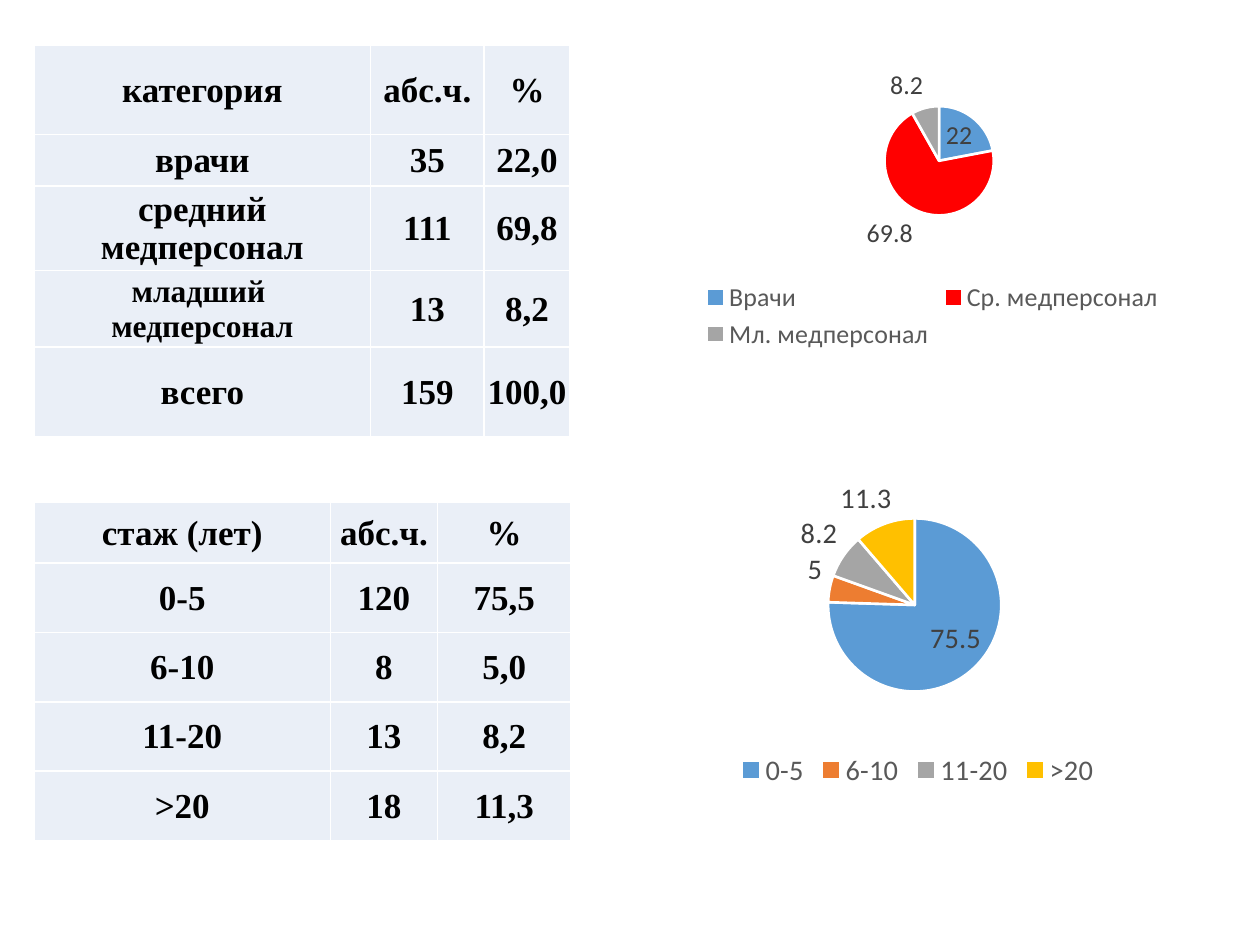
from lxml import etree
from pptx import Presentation
from pptx.chart.data import CategoryChartData
from pptx.dml.color import RGBColor
from pptx.enum.chart import XL_CHART_TYPE as ChartType
from pptx.enum.chart import XL_LABEL_POSITION as LabelPos
from pptx.enum.chart import XL_LEGEND_POSITION as LegendPos
from pptx.enum.text import MSO_ANCHOR as Anchor
from pptx.enum.text import PP_ALIGN as Align
from pptx.oxml import parse_xml
from pptx.oxml.ns import nsdecls, qn
from pptx.util import Cm, Pt

COLORS = {
    "black": "000000", "white": "FFFFFF", "cell": "EAEFF7",
    "label": "404040", "legend": "595959",
    "blue": "5B9BD5", "red": "FF0000", "orange": "ED7D31",
    "gray": "A5A5A5", "yellow": "FFC000",
}

STAFF = [
    ["категория", "абс.ч.", "%"],
    ["врачи", "35", "22,0"],
    ["средний медперсонал", "111", "69,8"],
    ["младший \nмедперсонал", "13", "8,2"],
    ["всего", "159", "100,0"],
]
EXPERIENCE = [
    ["стаж (лет)", "абс.ч.", "%"],
    ["0-5", "120", "75,5"],
    ["6-10", "8", "5,0"],
    ["11-20", "13", "8,2"],
    [">20", "18", "11,3"],
]


def rgb(name):
    return RGBColor.from_string(COLORS[name])


def set_font(font, size, color, name="Calibri", bold=False):
    font.size, font.name, font.bold = Pt(size), name, bold
    font.color.rgb = rgb(color)


def add_borders(cell):
    tcPr = cell._tc.get_or_add_tcPr()
    for i, side in enumerate(("lnL", "lnR", "lnT", "lnB")):
        tcPr.insert(i, parse_xml(
            f'<a:{side} {nsdecls("a")} w="12700"><a:solidFill>'
            f'<a:srgbClr val="{COLORS["white"]}"/></a:solidFill></a:{side}>'))


def fill_cell(cell, text):
    cell.text = text
    cell.vertical_anchor = Anchor.MIDDLE
    cell.margin_left = cell.margin_right = cell.margin_top = Cm(0.02)
    cell.margin_bottom = 0
    cell.fill.solid()
    cell.fill.fore_color.rgb = rgb("cell")
    size = 18 if "\n" in text else 20
    for p in cell.text_frame.paragraphs:
        p.alignment = Align.CENTER
        set_font(p.font, size, "black", "Times New Roman", True)
        for r in p.runs:
            set_font(r.font, size, "black", "Times New Roman", True)
    add_borders(cell)


def add_table(s, top, widths, heights, rows):
    table = s.shapes.add_table(
        len(rows), len(widths), Cm(0.69), Cm(top),
        Cm(sum(widths)), Cm(sum(heights))).table
    for col, width in zip(table.columns, widths):
        col.width = Cm(width)
    for row, height, texts in zip(table.rows, heights, rows):
        row.height = Cm(height)
        for cell, text in zip(row.cells, texts):
            fill_cell(cell, text)


def place_plot(chart, box):
    plot_area = chart._chartSpace.chart.plotArea
    for old in plot_area.findall(qn("c:layout")):
        plot_area.remove(old)
    layout = parse_xml(f'<c:layout {nsdecls("c")}><c:manualLayout/></c:layout>')
    settings = [("layoutTarget", "inner"), ("xMode", "edge"), ("yMode", "edge")]
    for tag, val in settings + list(zip("xywh", box)):
        etree.SubElement(layout[0], qn(f"c:{tag}")).set("val", str(val))
    plot_area.insert(0, layout)


def add_pie(s, frame, plot_box, size, slices):
    data = CategoryChartData()
    data.categories = [name for name, _, _ in slices]
    data.add_series("Series 1", [value for _, value, _ in slices])
    chart = s.shapes.add_chart(
        ChartType.PIE, *[Cm(v) for v in frame], data).chart
    set_font(chart.font, 10, "black")
    chart.has_title = False
    chart.has_legend = True
    chart.legend.position = LegendPos.BOTTOM
    chart.legend.include_in_layout = False
    set_font(chart.legend.font, size, "legend")
    plot = chart.plots[0]
    plot.vary_by_categories = True
    plot.has_data_labels = True
    labels = plot.data_labels
    labels.show_value, labels.show_percentage = True, False
    labels.position = LabelPos.BEST_FIT
    set_font(labels.font, size, "label")
    for i, (_, _, color) in enumerate(slices):
        fmt = plot.series[0].points[i].format
        fmt.fill.solid()
        fmt.fill.fore_color.rgb = rgb(color)
        fmt.line.color.rgb = rgb("white")
        fmt.line.width = Pt(1.5)
    place_plot(chart, plot_box)


def main():
    prs = Presentation()
    prs.slide_width, prs.slide_height = Cm(25.4), Cm(19.05)
    s = prs.slides.add_slide(prs.slide_layouts[6])
    add_pie(s, (12.65, 1.04, 12.32, 6.12), (0.42, 0.18, 0.18, 0.36), 14.8, [
        ("Врачи", 22, "blue"),
        ("Ср. медперсонал", 69.8, "red"),
        ("Мл. медперсонал", 8.2, "gray"),
    ])
    add_pie(s, (12.04, 9.27, 12.93, 6.73), (0.36, 0.17, 0.27, 0.53), 16.2, [
        ("0-5", 75.5, "blue"),
        ("6-10", 5, "orange"),
        ("11-20", 8.2, "gray"),
        (">20", 11.3, "yellow"),
    ])
    add_table(s, 0.91, [6.78, 2.29, 1.73], [1.8, 1.04, 1.7, 1.55, 1.8], STAFF)
    add_table(s, 10.13, [5.97, 2.16, 2.69], [1.22] + [1.4] * 4, EXPERIENCE)
    prs.save("out.pptx")


if __name__ == "__main__":
    main()
